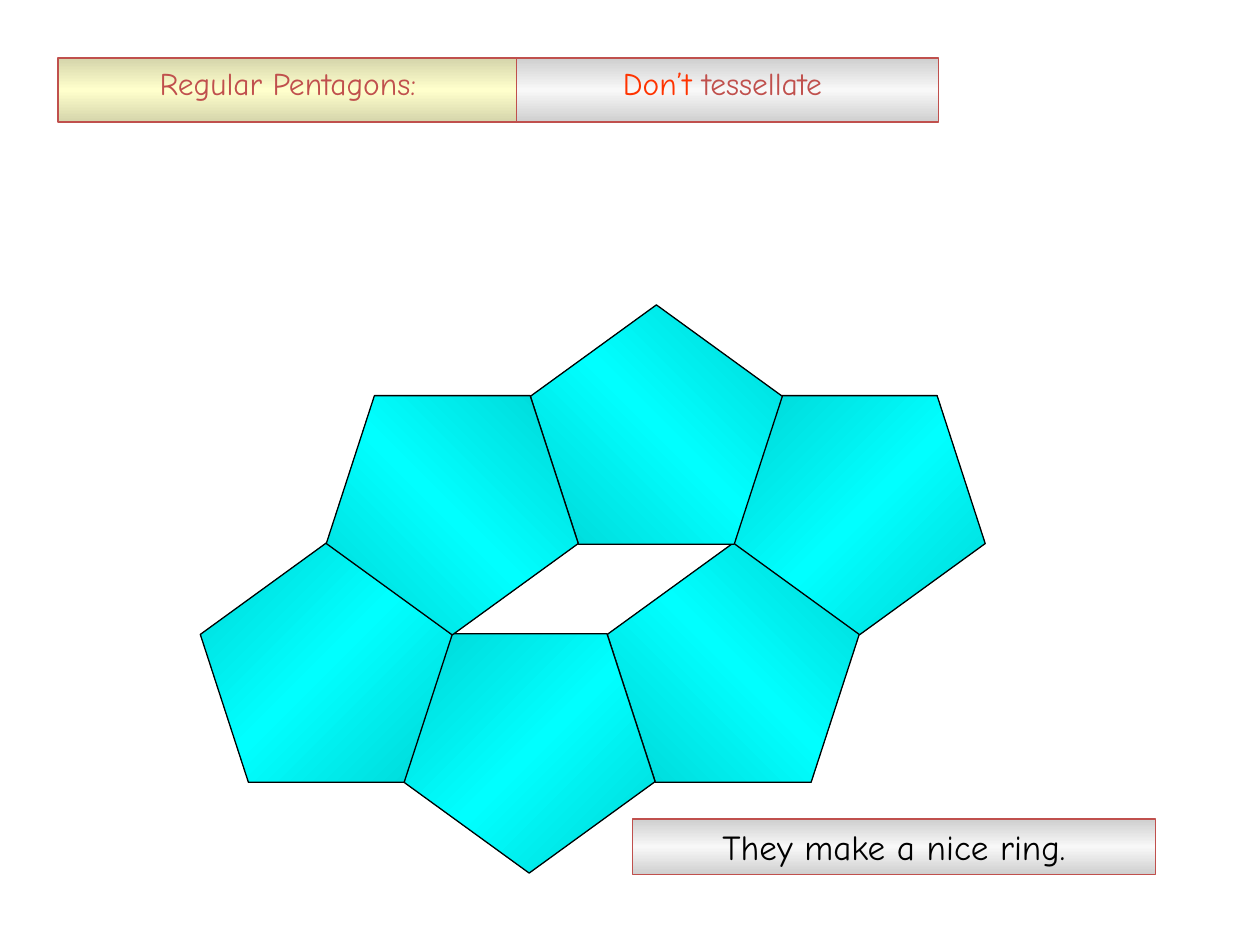
"""Build a slide showing six regular pentagons that form a ring."""
from copy import deepcopy

from pptx import Presentation
from pptx.dml.color import RGBColor
from pptx.enum.shapes import MSO_SHAPE as Shape
from pptx.enum.text import MSO_ANCHOR as Anchor, PP_ALIGN as Align
from pptx.util import Inches, Pt


def color(value):
    return RGBColor.from_string(value)


def add_part(preset, box, edge, middle, outline, angle):
    part = slide.shapes.add_shape(preset, *[Inches(n) for n in box])
    part.shadow.inherit = False
    part.fill.gradient()
    part.fill.gradient_angle = angle
    stop_list = part.fill._fill._gradFill.gsLst
    stop_list.append(deepcopy(stop_list[0]))
    stops = zip(part.fill.gradient_stops, (0, 0.5, 1), (edge, middle, edge))
    for stop, position, shade in stops:
        stop.position = position
        stop.color.rgb = color(shade)
    part.line.color.rgb = color(outline)
    part.line.width = Pt(0.75)
    return part


prs = Presentation()
prs.slide_width, prs.slide_height = Inches(10), Inches(7.5)
slide = prs.slides.add_slide(prs.slide_layouts[6])

ring = [
    (5.82, 3.14, "v"),
    (4.82, 4.31, ""),
    (4.21, 2.42, ""),
    (3.2, 5.03, "v"),
    (1.59, 4.31, "h"),
    (2.59, 3.14, "hv"),
]
for left, top, flips in ring:
    pentagon = add_part(Shape.REGULAR_PENTAGON, (left, top, 2, 1.9),
                        "00D5D5", "00FFFF", "000000", 45)
    for axis in flips:
        pentagon._element.spPr.xfrm.set("flip" + axis.upper(), "1")

yellow, silver = ("D5D5AB", "FFFFCC"), ("CFCFCF", "F8F8F8")
banners = [
    ((0.46, 0.46, 3.65, 0.51), yellow, 18, [("Regular Pentagons:", "C0504D")]),
    ((4.1, 0.46, 3.35, 0.51), silver, 18,
     [("Don’t ", "FF3300"), ("tessellate ", "C0504D")]),
    ((5.02, 6.5, 4.15, 0.44), silver, 20, [("They make a nice ring.", "000000")]),
]
frame_format = {"word_wrap": True, "vertical_anchor": Anchor.TOP}
for box, (edge, middle), size, wording in banners:
    banner = add_part(Shape.RECTANGLE, box, edge, middle, "C0504D", 90)
    for name, value in frame_format.items():
        setattr(banner.text_frame, name, value)
    paragraph = banner.text_frame.paragraphs[0]
    paragraph.alignment = Align.CENTER
    for text, ink in wording:
        run = paragraph.add_run()
        run.text = text
        for name, value in {"name": "Comic Neue", "size": Pt(size)}.items():
            setattr(run.font, name, value)
        run.font.color.rgb = color(ink)

prs.save("out.pptx")
